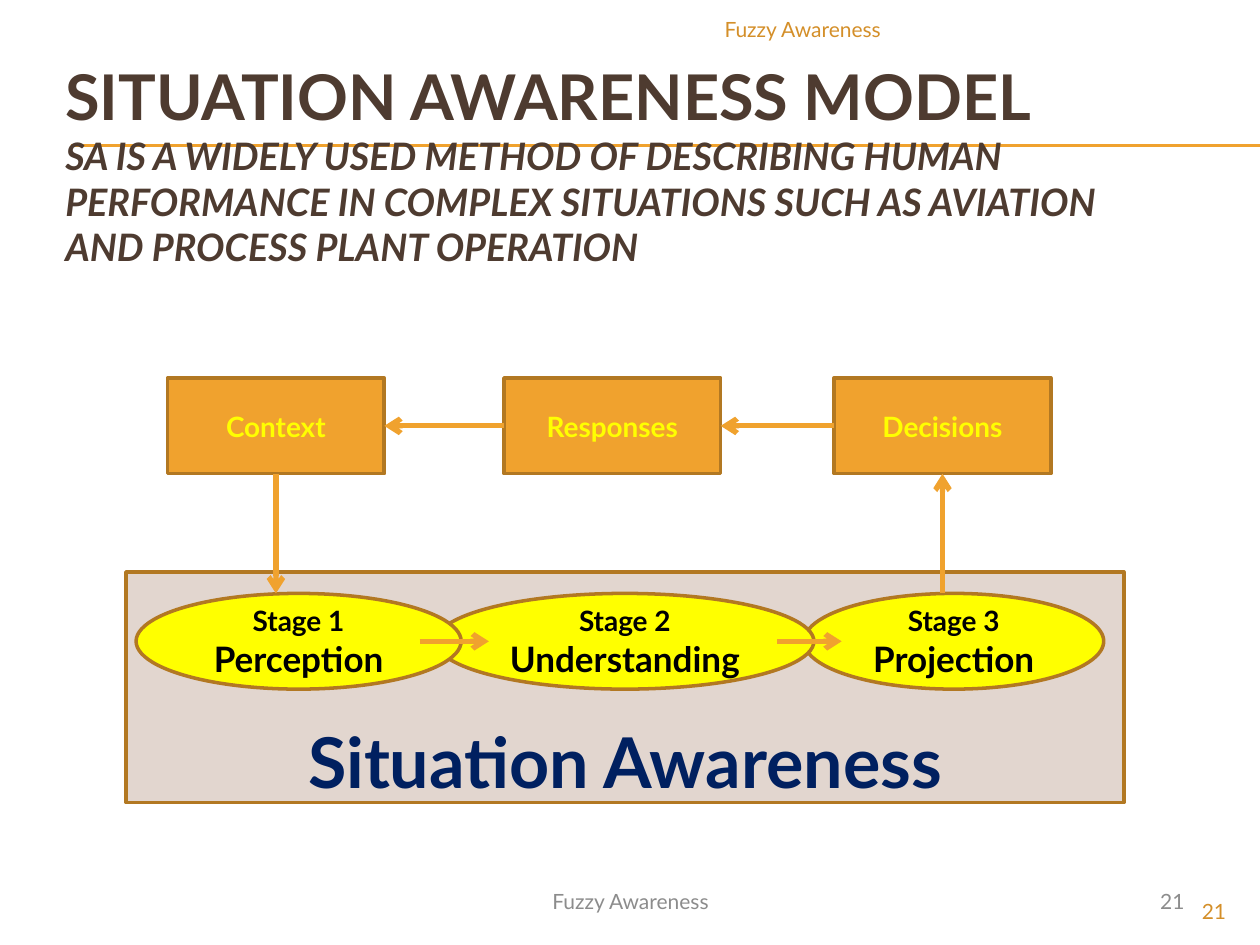
from lxml import etree
from pptx import Presentation
from pptx.dml.color import RGBColor
from pptx.enum.shapes import MSO_CONNECTOR, MSO_SHAPE
from pptx.enum.text import MSO_ANCHOR, PP_ALIGN
from pptx.oxml.ns import qn
from pptx.util import Inches, Pt

STRAIGHT = MSO_CONNECTOR.STRAIGHT
RECTANGLE, OVAL = MSO_SHAPE.RECTANGLE, MSO_SHAPE.OVAL
TOP, MIDDLE, BOTTOM = MSO_ANCHOR.TOP, MSO_ANCHOR.MIDDLE, MSO_ANCHOR.BOTTOM
LEFT, CENTER, RIGHT = PP_ALIGN.LEFT, PP_ALIGN.CENTER, PP_ALIGN.RIGHT
SIDE_LEFT, SIDE_BOTTOM, SIDE_RIGHT = 1, 2, 3

FONT = "Lato"
ORANGE, BROWN_LINE, YELLOW = "F0A22E", "B27822", "FFFF00"
TITLE_BROWN, ACCENT, GRAY = "4E3B30", "D48F29", "8C8C8C"
PANEL, NAVY, BLACK = "E2D6CF", "002060", "000000"


def rgb(value):
    return RGBColor.from_string(value)


def add_run(paragraph, text, size, color, **formats):
    run = paragraph.add_run()
    run.text = text
    run.font.color.rgb = rgb(color)
    for name, value in {"name": FONT, "size": Pt(size), **formats}.items():
        setattr(run.font, name, value)


def write_lines(shape, lines, color, anchor=MIDDLE, align=CENTER, **formats):
    """Write (text, size) pairs, one paragraph each."""
    frame = shape.text_frame
    frame.word_wrap = True
    frame.vertical_anchor = anchor
    for index, (text, size) in enumerate(lines):
        paragraph = frame.add_paragraph() if index else frame.paragraphs[0]
        paragraph.alignment = align
        add_run(paragraph, text, size, color, **formats)


def add_block(slide, kind, box, fill):
    block = slide.shapes.add_shape(kind, *map(Inches, box))
    block.shadow.inherit = False
    block.fill.solid()
    block.fill.fore_color.rgb = rgb(fill)
    block.line.color.rgb = rgb(BROWN_LINE)
    block.line.width = Pt(2)
    return block


def add_line(slide, start, end, width, arrow=False):
    line = slide.shapes.add_connector(STRAIGHT, *map(Inches, (*start, *end)))
    line.line.color.rgb = rgb(ORANGE)
    line.line.width = Pt(width)
    properties = line._element.spPr
    if arrow:
        etree.SubElement(properties.find(qn("a:ln")), qn("a:tailEnd"), type="arrow")
    etree.SubElement(properties, qn("a:effectLst"))
    return line


def add_title(slide, box):
    # Double rule behind the title
    for y in (1.15, 1.16):
        add_line(slide, (0.56, y), (10, y), 0.75)
    title = slide.shapes.add_textbox(*map(Inches, box))
    write_lines(title, [("SITUATION AWARENESS MODEL", 36)], TITLE_BROWN,
                align=LEFT, bold=True)
    paragraph = title.text_frame.paragraphs[0]
    paragraph.add_line_break()
    add_run(paragraph,
            "SA IS A WIDELY USED METHOD OF DESCRIBING HUMAN PERFORMANCE IN "
            "COMPLEX SITUATIONS SUCH AS AVIATION AND PROCESS PLANT OPERATION",
            21.6, TITLE_BROWN, bold=True, italic=True)


def add_marginal(slide, box, text, color, anchor, align):
    marginal = slide.shapes.add_textbox(*map(Inches, box))
    write_lines(marginal, [(text, 12)], color, anchor, align)


def add_model(slide, box):
    left, top, width, height = box
    item_height = 0.76
    step_width = 1.72
    panel_top = top + 1.54
    stage_top = panel_top + 0.17
    stage_middle = stage_top + item_height / 2
    step_bottom = top + item_height

    # Situation awareness panel
    panel = add_block(slide, RECTANGLE,
                      (left, panel_top, width, height - 1.54), PANEL)
    panel.text_frame.margin_bottom = 0
    write_lines(panel, [("Situation Awareness", 40)], NAVY, BOTTOM, bold=True)

    # Step boxes above the panel
    steps = []
    step_offsets = (0.33, 3, 5.62)
    for label, offset in zip(("Context", "Responses", "Decisions"), step_offsets):
        step = add_block(slide, RECTANGLE,
                         (left + offset, top, step_width, item_height), ORANGE)
        write_lines(step, [(label, 16)], YELLOW, bold=True)
        steps.append(step)

    # Overlapping stages, the first one in front
    stages = [("Stage 3", "Projection", 5.38, 2.38),
              ("Stage 2", "Understanding", 2.46, 3),
              ("Stage 1", "Perception", 0.08, 2.58)]
    for number, label, offset, stage_width in stages:
        stage = add_block(slide, OVAL,
                          (left + offset, stage_top, stage_width, item_height), YELLOW)
        write_lines(stage, [(number, 16), (label, 20)], BLACK, bold=True)

    # Arrows from stage to stage
    for start, end in ((2.33, 2.88), (5.17, 5.68)):
        add_line(slide, (left + start, stage_middle), (left + end, stage_middle),
                 3, arrow=True)

    # Arrows between steps, right to left
    step_middle = top + item_height / 2
    for index in (2, 1):
        start = left + step_offsets[index]
        end = left + step_offsets[index - 1] + step_width
        arrow = add_line(slide, (start, step_middle), (end, step_middle), 3, arrow=True)
        arrow.begin_connect(steps[index], SIDE_LEFT)
        arrow.end_connect(steps[index - 1], SIDE_RIGHT)

    # Arrows between the step row and the stages
    context_x, decisions_x = (left + step_offsets[index] + step_width / 2
                              for index in (0, 2))
    down = add_line(slide, (context_x, step_bottom), (context_x, stage_top), 3, arrow=True)
    down.begin_connect(steps[0], SIDE_BOTTOM)
    up = add_line(slide, (decisions_x, stage_top), (decisions_x, step_bottom), 3, arrow=True)
    up.end_connect(steps[2], SIDE_BOTTOM)


def main():
    deck = Presentation()
    deck.slide_width, deck.slide_height = Inches(10), Inches(7.5)
    slide = deck.slides.add_slide(deck.slide_layouts[6])
    add_title(slide, (0.42, 0.42, 9, 1.75))
    add_model(slide, (1, 3, 7.92, 3.37))
    # Header, footer and slide numbers
    add_marginal(slide, (3.42, 0.08, 3.67, 0.32), "Fuzzy Awareness", ACCENT, TOP, RIGHT)
    add_marginal(slide, (9, 7.08, 0.83, 0.27), "21", ACCENT, TOP, RIGHT)
    add_marginal(slide, (7.17, 6.95, 2.33, 0.4), "21", GRAY, MIDDLE, RIGHT)
    add_marginal(slide, (3.42, 6.95, 3.17, 0.4), "Fuzzy Awareness", GRAY, MIDDLE, CENTER)
    deck.save("out.pptx")


if __name__ == "__main__":
    main()
